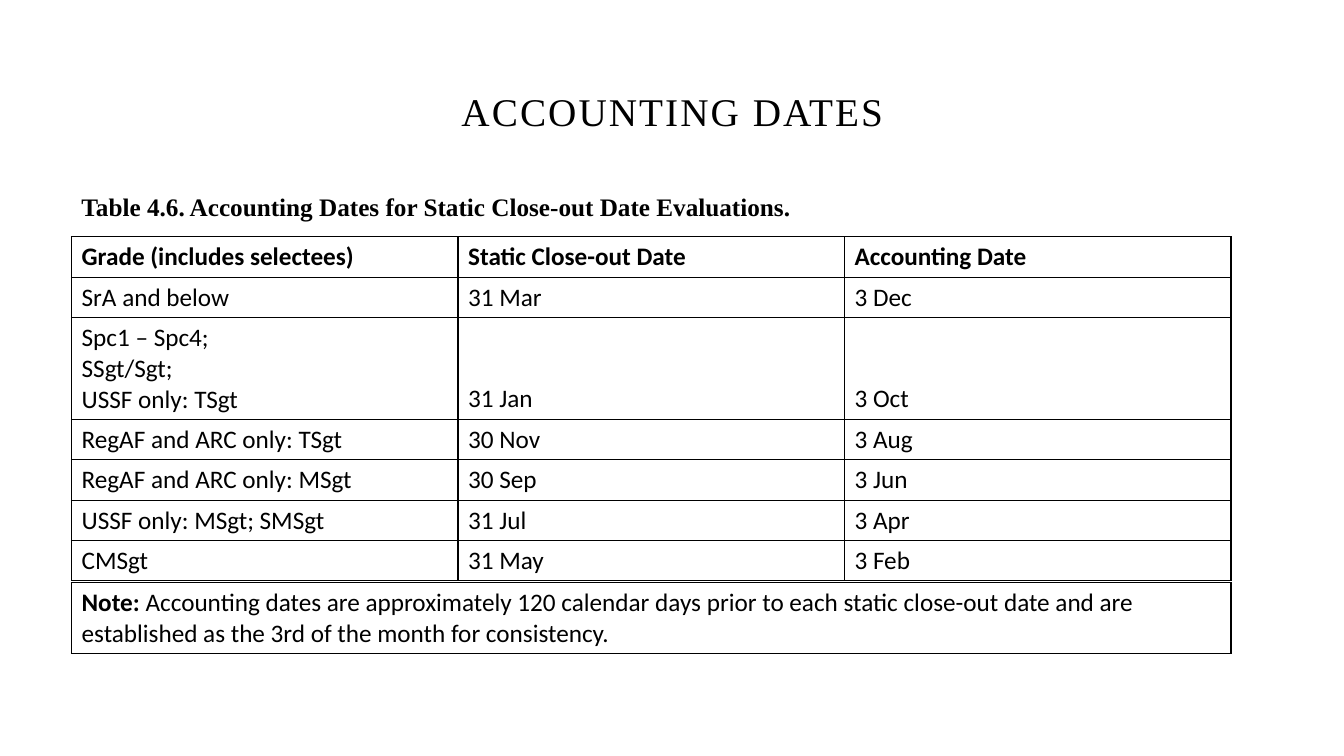
from lxml import etree
from pptx import Presentation
from pptx.dml.color import RGBColor
from pptx.enum import text
from pptx.oxml import ns
from pptx.util import Inches, Pt

COLORS = {"ink": "000000", "paper": "FFFFFF"}
INK = RGBColor.from_string(COLORS["ink"])
LEFT, WIDTH = 0.71, 11.5

prs = Presentation()
prs.slide_width, prs.slide_height = Inches(13.33), Inches(7.5)
slide = prs.slides.add_slide(prs.slide_layouts[6])
slide.background.fill.solid()
slide.background.fill.fore_color.rgb = RGBColor.from_string(COLORS["paper"])


def style(frame, font, size, bold=False):
    frame.word_wrap = True
    for paragraph in frame.paragraphs:
        for run in paragraph.runs:
            run.font.name, run.font.size, run.font.bold = font, Pt(size), bold
            run.font.color.rgb = INK


def add_grid(rows, top, heights):
    columns = len(rows[0])
    grid = slide.shapes.add_table(len(rows), columns, Inches(LEFT), Inches(top),
                                  Inches(WIDTH), Inches(sum(heights))).table
    grid.first_row = grid.horz_banding = False
    for column in grid.columns:
        column.width = Inches(WIDTH / columns)
    for r, row in enumerate(rows):
        grid.rows[r].height = Inches(heights[r])
        for c, words in enumerate(row):
            cell = grid.cell(r, c)
            cell.text_frame.text = words
            cell.vertical_anchor = text.MSO_ANCHOR.BOTTOM
            style(cell.text_frame, "Calibri", 18)
            # Thin border on each side, placed ahead of the fill
            props = cell._tc.get_or_add_tcPr()
            for side in ("lnL", "lnR", "lnT", "lnB"):
                line = etree.SubElement(props, ns.qn(f"a:{side}"), w=str(Pt(1)))
                solid = etree.SubElement(line, ns.qn("a:solidFill"))
                etree.SubElement(solid, ns.qn("a:srgbClr"), val=COLORS["ink"])
            cell.fill.background()
    return grid


# Title
title = slide.shapes.add_textbox(Inches(0.92), Inches(0.4), Inches(WIDTH), Inches(1.45)).text_frame
title.text = "ACCOUNTING DATES"
title.vertical_anchor = text.MSO_ANCHOR.MIDDLE
style(title, "Times New Roman", 28)
heading = title.paragraphs[0]
heading.alignment = text.PP_ALIGN.CENTER
heading.line_spacing = 0.9
heading.runs[0]._r.get_or_add_rPr().set("spc", "150")

# Dates by grade
dates = [
    ("Grade (includes selectees)", "Static Close-out Date", "Accounting Date"),
    ("SrA and below", "31 Mar", "3 Dec"),
    ("Spc1 – Spc4;\nSSgt/Sgt;\nUSSF only: TSgt", "31 Jan", "3 Oct"),
    ("RegAF and ARC only: TSgt", "30 Nov", "3 Aug"),
    ("RegAF and ARC only: MSgt", "30 Sep", "3 Jun"),
    ("USSF only: MSgt; SMSgt", "31 Jul", "3 Apr"),
    ("CMSgt", "31 May", "3 Feb"),
]
heights = [1.01 if "\n" in grade else 0.4 for grade, _, _ in dates]
schedule = add_grid(dates, 2.35, heights)
for header in schedule.rows[0].cells:
    style(header.text_frame, "Calibri", 18, bold=True)

# Table caption
caption = slide.shapes.add_textbox(Inches(LEFT), Inches(1.85), Inches(8.38), Inches(0.4)).text_frame
caption.text = "Table 4.6. Accounting Dates for Static Close-out Date Evaluations."
style(caption, "Times New Roman", 18, bold=True)

# Note below the table
note = add_grid([("Note: ",)], 5.78, [0.7]).cell(0, 0).text_frame
note.paragraphs[0].add_run().text = (
    "Accounting dates are approximately 120 calendar days prior to each static "
    "close-out date and are established as the 3rd of the month for consistency.")
style(note, "Calibri", 18)
note.paragraphs[0].runs[0].font.bold = True

prs.save("out.pptx")
